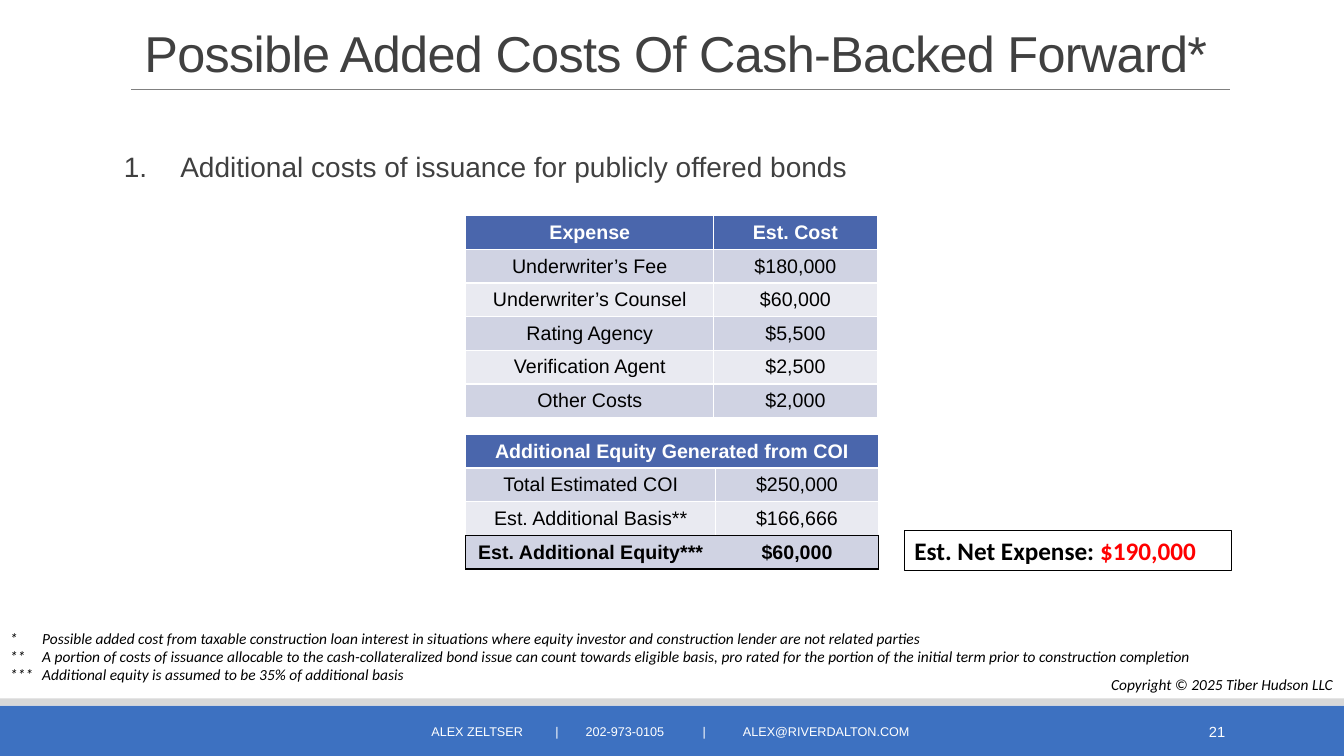
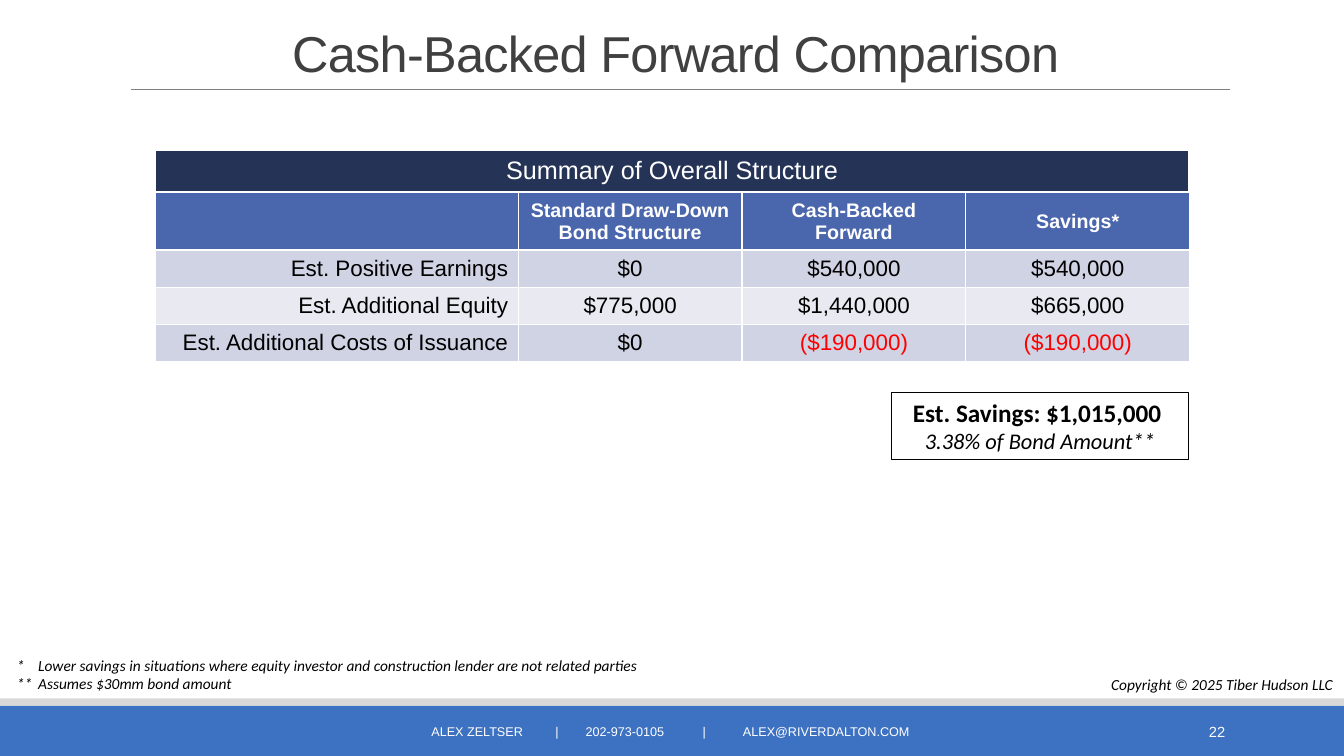
"""Build two slides on the costs and savings of a cash-backed forward."""
from lxml import etree
from pptx import Presentation
from pptx.dml.color import RGBColor
from pptx.enum.shapes import MSO_CONNECTOR, MSO_SHAPE
from pptx.enum.text import MSO_ANCHOR, PP_ALIGN
from pptx.oxml.ns import qn
from pptx.util import Inches, Pt

LEFT, MID, RIGHT = PP_ALIGN.LEFT, PP_ALIGN.CENTER, PP_ALIGN.RIGHT
TOP, HALF = MSO_ANCHOR.TOP, MSO_ANCHOR.MIDDLE
RECT, LINE = MSO_SHAPE.RECTANGLE, MSO_CONNECTOR.STRAIGHT

HUES = {
    "white": "FFFFFF", "black": "000000", "red": "FF0000", "ink": "404040",
    "rule": "808080", "band": "3D71C1", "strip": "D8D8D8", "navy": "253356",
    "head": "4A66AC", "dark": "D0D3E3", "light": "E9EAF1",
}
COLORS = {name: RGBColor.from_string(code) for name, code in HUES.items()}
TABS = [1.23, 1.53, 2.69, 3.09]


def say(para, text, size, hue="black", face="Arial", bold=False, slant=False):
    run = para.add_run()
    run.text = text
    font = run.font
    font.size, font.name, font.bold, font.italic = Pt(size), face, bold, slant
    font.color.rgb = COLORS[hue]
    return run


def box(slide, rect, align=LEFT, anchor=TOP, tabs=(), edge=False):
    place = [Inches(n) for n in rect]
    if edge:
        shape = slide.shapes.add_shape(RECT, *place)
        shape.shadow.inherit = False
        shape.fill.background()
        shape.line.color.rgb = COLORS["black"]
        shape.line.width = Pt(0.75)
    else:
        shape = slide.shapes.add_textbox(*place)
    frame = shape.text_frame
    frame.word_wrap = True
    frame.vertical_anchor = anchor
    para = frame.paragraphs[0]
    para.alignment = align
    if tabs:
        stops = etree.SubElement(para._p.get_or_add_pPr(), qn("a:tabLst"))
        for stop in tabs:
            etree.SubElement(stops, qn("a:tab"), pos=str(Inches(stop)), algn="l")
    return para


costs = [
    ["Expense", "Est. Cost"],
    ["Underwriter’s Fee", "$180,000"],
    ["Underwriter’s Counsel", "$60,000"],
    ["Rating Agency", "$5,500"],
    ["Verification Agent", "$2,500"],
    ["Other Costs", "$2,000"],
]
equity = [
    ["Additional Equity Generated from COI", ""],
    ["Total Estimated COI", "$250,000"],
    ["Est. Additional Basis**", "$166,666"],
    ["Est. Additional Equity***", "$60,000"],
]
gains = [
    ["", "Standard Draw-Down Bond Structure", "Cash-Backed Forward", "Savings*"],
    ["Est. Positive Earnings", "$0", "$540,000", "$540,000"],
    ["Est. Additional Equity", "$775,000", "$1,440,000", "$665,000"],
    ["Est. Additional Costs of Issuance", "$0", "($190,000)", "($190,000)"],
]
pages = [
    {
        "title": "Possible Added Costs Of Cash-Backed Forward*",
        "number": "21",
        "notes": [
            "*\tPossible added cost from taxable construction loan interest in situations "
            "where equity investor and construction lender are not related parties",
            "**\tA portion of costs of issuance allocable to the cash-collateralized bond "
            "issue can count towards eligible basis, pro rated for the portion of the "
            "initial term prior to construction completion",
            "***\tAdditional equity is assumed to be 35% of additional basis",
        ],
        "spot": (0, 6.19, 0.32),
        "tables": [
            (4.62, 2.14, [2.46, 1.62], 0.33, 0.33, 14, MID, costs),
            (4.62, 4.31, [2.48, 1.61], 0.33, 0.33, 14, MID, equity),
        ],
    },
    {
        "title": "Cash-Backed Forward Comparison",
        "number": "22",
        "notes": [
            "*\tLower savings in situations where equity investor and construction lender "
            "are not related parties",
            "**\tAssumes $30mm bond amount",
        ],
        "spot": (0.07, 6.46, 0.21),
        "tables": [
            (1.54, 1.91, [3.6, 2.22, 2.22, 2.22], 0.57, 0.37, 16, RIGHT, gains),
            (1.54, 1.49, [10.25], 0.41, 0.41, 18, MID, [["Summary of Overall Structure"]]),
        ],
    },
]

deck = Presentation()
deck.slide_width, deck.slide_height = Inches(13.33), Inches(7.5)

for page in pages:
    slide = deck.slides.add_slide(deck.slide_layouts[6])
    for top, high, hue in [(7, 0.5, "band"), (6.93, 0.07, "strip")]:
        band = slide.shapes.add_shape(RECT, 0, Inches(top), deck.slide_width, Inches(high))
        band.shadow.inherit = False
        band.fill.solid()
        band.fill.fore_color.rgb = COLORS[hue]
        band.line.fill.background()
    rule = slide.shapes.add_connector(
        LINE, Inches(1.3), Inches(0.89), Inches(12.2), Inches(0.89))
    rule.line.color.rgb = COLORS["rule"]
    rule.line.width = Pt(0.5)
    etree.SubElement(rule._element.spPr, qn("a:effectLst"))

    para = box(slide, (1.2, 0.31, 11, 0.52), MID, HALF)
    para.line_spacing = 0.85
    title = say(para, page["title"], 36, "ink")
    title._r.get_or_add_rPr().set("spc", "-50")
    say(box(slide, (10.82, 7.06, 1.43, 0.4), RIGHT, HALF), page["number"], 10.5, "white")
    say(box(slide, (4.18, 7.06, 5.12, 0.4), LEFT, HALF, TABS),
        "ALEX ZELTSER\t|\t202-973-0105\t|\tALEX@RIVERDALTON.COM", 9, "white")
    say(box(slide, (10.8, 6.65, 2.52, 0.29), RIGHT),
        "Copyright © 2025 Tiber Hudson LLC", 11, face="Calibri", slant=True)

    left, top, tab = page["spot"]
    for i, note in enumerate(page["notes"]):
        say(box(slide, (left, top + 0.18 * i, 11.98, 0.29), tabs=[tab]),
            note, 11, face="Calibri", slant=True)

    for left, top, wides, first, high, size, side, rows in page["tables"]:
        total = first + high * (len(rows) - 1)
        table = slide.shapes.add_table(
            len(rows), len(wides), Inches(left), Inches(top),
            Inches(sum(wides)), Inches(total)).table
        lone = len(rows) == 1
        table.first_row = not lone
        for col, wide in zip(table.columns, wides):
            col.width = Inches(wide)
        for r, row in enumerate(rows):
            table.rows[r].height = Inches(high if r else first)
            for c, text in enumerate(row):
                cell = table.cell(r, c)
                edges = {}
                if rows is equity and r == 2:
                    edges = {"lnB": "black"}
                elif rows is equity and r == 3:
                    edges = {"lnL": None if c else "black", "lnR": "black" if c else None,
                             "lnT": "black", "lnB": "black"}
                for tag, hue in edges.items():
                    edge = etree.SubElement(
                        cell._tc.get_or_add_tcPr(), qn("a:" + tag), w=str(Pt(1)))
                    if hue:
                        fill = etree.SubElement(edge, qn("a:solidFill"))
                        etree.SubElement(fill, qn("a:srgbClr"), val=HUES[hue])
                    else:
                        etree.SubElement(edge, qn("a:noFill"))
                shade = "navy" if lone else "head" if r == 0 else "dark" if r % 2 else "light"
                cell.fill.solid()
                cell.fill.fore_color.rgb = COLORS[shade]
                cell.vertical_anchor = HALF
                para = cell.text_frame.paragraphs[0]
                para.alignment = side if r and c == 0 else MID
                if not text:
                    continue
                if r == 0:
                    say(para, text, size if lone else 14, "white", bold=not lone)
                else:
                    say(para, text, size, "red" if text.startswith("(") else "black",
                        bold=rows is equity and r == 3)
        if rows is equity:
            table.cell(0, 0).merge(table.cell(0, 1))

cost, gain = deck.slides

item = box(cost, (1.13, 1.47, 11.49, 0.5))
item.line_spacing = 0.9
props = item._p.get_or_add_pPr()
props.set("marL", str(Inches(0.56)))
props.set("indent", str(Inches(-0.56)))
etree.SubElement(props, qn("a:buFont"), typeface="+mj-lt")
etree.SubElement(props, qn("a:buAutoNum"), type="arabicPeriod")
say(item, "Additional costs of issuance for publicly offered bonds", 20, "ink")

net = box(cost, (8.97, 5.26, 3.24, 0.4), edge=True)
say(net, "Est. Net Expense: ", 18, face="Calibri", bold=True)
say(net, "$190,000", 18, "red", "Calibri", bold=True)

saved = box(gain, (8.84, 3.89, 2.95, 0.67), MID, edge=True)
say(saved, "Est. Savings: $1,015,000 ", 18, face="Calibri", bold=True)
share = gain.shapes[-1].text_frame.add_paragraph()
share.alignment = MID
say(share, "3.38% of Bond Amount**", 16, face="Calibri", slant=True)

deck.save("out.pptx")
